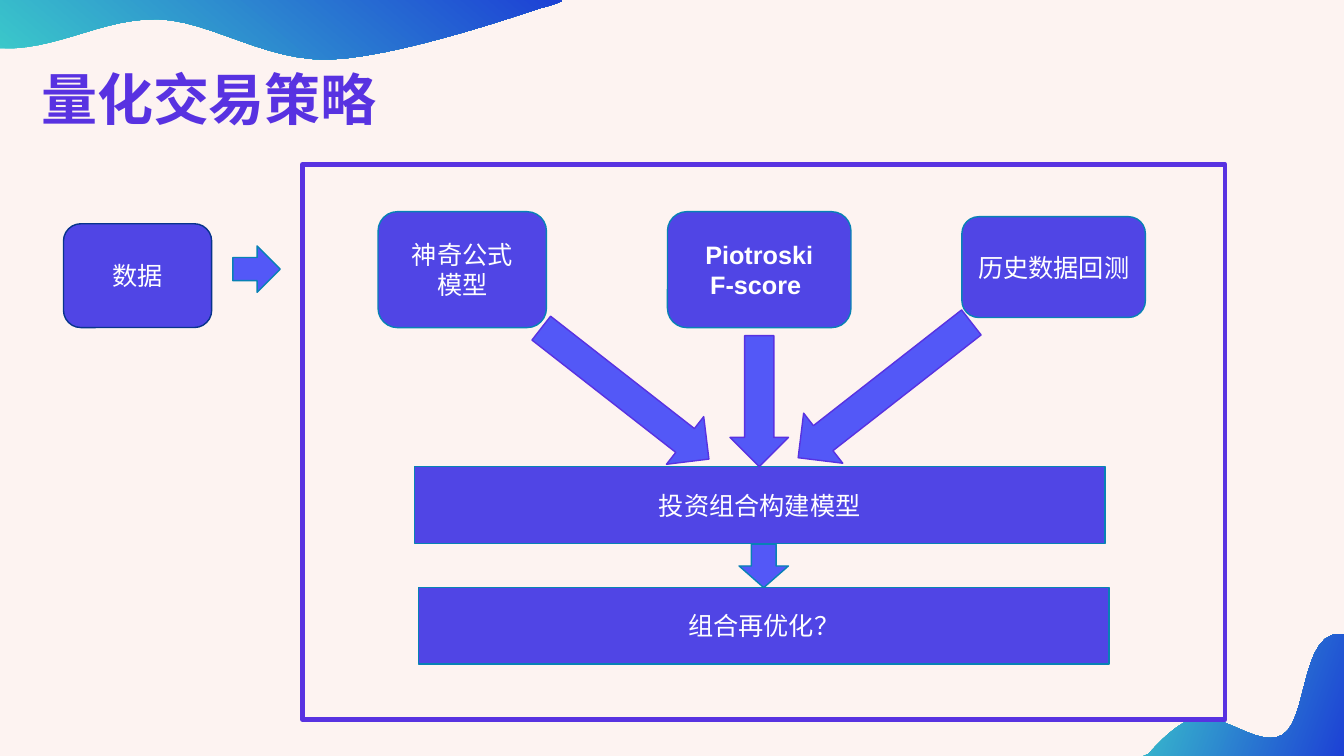
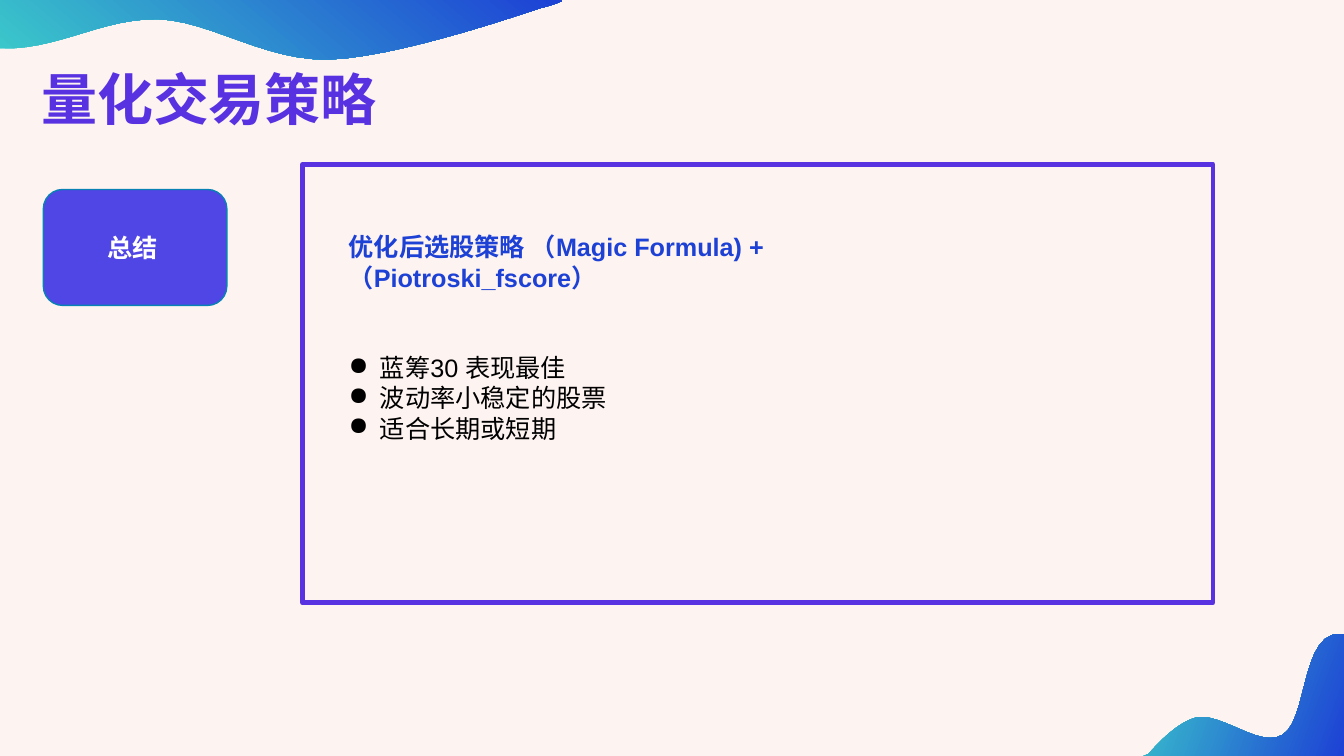
from pptx import Presentation
from pptx import util as u
from pptx.dml.color import RGBColor
from pptx.enum import shapes, text
from pptx.oxml.ns import qn

SCALE = 9144  # EMU in one px, 100 px to the inch
KIND = shapes.MSO_SHAPE
MID = text.PP_ALIGN.CENTER

CREAM, WHITE, BLACK = "FDF3F1", "FFFFFF", "000000"
PURPLE, INDIGO, VIOLET = "5832E1", "5045E5", "5358F7"
TEAL, NAVY = "0881B5", "07348C"
AQUA, BLUE = "3BCACA", "1D41D5"

# A pair is a corner; six numbers are two control points and an end.
TOP = [(0, 0), (556, 0), (557, 1),
       (555, 2, 549, 5, 536, 8), (503, 19, 390, 57, 327, 59),
       (263, 61, 210, 21, 157, 19), (105, 18, 65, 45, 13, 48), (0, 48)]
FOOT = [(199, 0), (199, 121), (0, 121), (5, 119),
        (18, 104, 36, 87, 52, 83), (77, 77, 116, 114, 138, 100),
        (161, 87, 157, 11, 187, 1), (189, 1, 191, 0, 193, 0)]


def px(n):
    return round(n * SCALE)


def color(code):
    return RGBColor.from_string(code)


def write(shape, lines, size=18, font="Arial", ink=WHITE, bold=False,
          align=None, bullet=None, indent=0, before=0, fresh=True):
    """Fill the shape with paragraphs, or add to it when not fresh."""
    frame = shape.text_frame
    frame.word_wrap = True
    for i, line in enumerate(lines):
        para = frame.paragraphs[0] if fresh and i == 0 else frame.add_paragraph()
        if bullet:
            props = para._p.get_or_add_pPr()
            props.set("marL", str(px(indent)))
            props.set("indent", str(-px(indent)))
            mark = props.makeelement(qn("a:buChar"), {"char": bullet})
            props.append(mark)
        if align is not None:
            para.alignment = align
        if before and i == 0:
            para.space_before = u.Pt(before)
        run = para.add_run()
        run.text = line
        run.font.size, run.font.name = u.Pt(size), font
        run.font.bold = bold
        run.font.color.rgb = color(ink)


def label(page, x, y, w, h, lines, **style):
    box = page.shapes.add_textbox(px(x), px(y), px(w), px(h))
    write(box, lines, **style)
    return box


def draw(page, kind, x, y, w, h, fill=None, line=TEAL, width=1, turn=0):
    shape = page.shapes.add_shape(kind, px(x), px(y), px(w), px(h))
    shape.shadow.inherit = False
    if fill:
        shape.fill.solid()
        shape.fill.fore_color.rgb = color(fill)
    else:
        shape.fill.background()
    shape.line.color.rgb = color(line)
    shape.line.width = u.Pt(width)
    shape.rotation = turn
    return shape


def node(page, x, y, w, h, lines, kind=KIND.ROUNDED_RECTANGLE, line=TEAL, bold=False):
    shape = draw(page, kind, x, y, w, h, INDIGO, line)
    shape.text_frame.vertical_anchor = text.MSO_ANCHOR.MIDDLE
    write(shape, lines, bold=bold, align=MID)


def arrow(page, x, y, w, h, line=PURPLE, turn=0, kind=KIND.DOWN_ARROW):
    draw(page, kind, x, y, w, h, VIOLET, line, turn=turn)


def border(page, x, y, w, h):
    draw(page, KIND.RECTANGLE, x, y, w, h, line=PURPLE, width=3.25)


def trace(path, steps=12):
    """Turn corners and Bezier curves into a list of points."""
    dots = []
    for part in path:
        if len(part) == 2:
            dots.append(part)
            continue
        ends = [dots[-1], part[:2], part[2:4], part[4:]]
        for k in range(1, steps + 1):
            t = k / steps
            mix = ((1 - t) ** 3, 3 * t * (1 - t) ** 2, 3 * t * t * (1 - t), t ** 3)
            dots.append(tuple(sum(m * e[a] for m, e in zip(mix, ends))
                              for a in (0, 1)))
    return dots


def wave(page, x, y, path, angle):
    dots = [(px(x + a), px(y + b)) for a, b in trace(path)]
    pen = page.shapes.build_freeform(*dots[0])
    pen.add_line_segments(dots[1:], close=True)
    shape = pen.convert_to_shape()
    shape.shadow.inherit = False
    shape.line.fill.background()
    shape.fill.gradient()
    shape.fill.gradient_angle = angle
    for stop, code in zip(shape.fill.gradient_stops, (AQUA, BLUE)):
        stop.color.rgb = color(code)


def start(deck, title):
    """Add a page with its background, waves and title."""
    page = deck.slides.add_slide(deck.slide_layouts[6])
    page.background.fill.solid()
    page.background.fill.fore_color.rgb = color(CREAM)
    wave(page, 0, 0, TOP, 50)
    wave(page, 1134, 629, FOOT, 340)
    label(page, 31, 59, 630, 77, [title], size=40,
          font="Times New Roman", ink=PURPLE, bold=True)
    return page


def source(page, x, y):
    node(page, x, y, 147, 103, ["数据"], line=NAVY)
    arrow(page, x + 168, y + 22, 47, 46, line=TEAL, kind=KIND.RIGHT_ARROW)


def flow(page, x, y, w, h):
    """Three models lead into a portfolio, which is then refined."""
    node(page, x + 362, y + 47, 182, 115, ["Piotroski", "F-score "], bold=True)
    node(page, x + 654, y + 52, 182, 100, ["历史数据回测"])
    node(page, x + 75, y + 47, 167, 115, ["神奇公式", "模型"])
    steps = [(111, 300, "投资组合构建模型"), (115, 420, "组合再优化？")]
    for dx, dy, name in steps:
        node(page, x + dx, y + dy, 685, 76, [name], kind=KIND.RECTANGLE)
    arrow(page, x + 424, y + 170, 58, 130)
    arrow(page, x + 546, y + 115, 63, 218, turn=52)
    arrow(page, x + 290, y + 122, 60, 211, turn=308)
    arrow(page, x + 433, y + 377, 49, 43, line=TEAL)
    border(page, x, y, w, h)


def recap(page, x, y, w, h):
    border(page, x, y, w, h)
    box = label(page, x + 36, y + 62, 640, 252,
                ["优化后选股策略 （Magic Formula) + （Piotroski_fscore）"],
                ink=BLUE, bold=True)
    write(box, ["蓝筹30 表现最佳", "波动率小稳定的股票", "适合长期或短期"],
          ink=BLACK, bullet="●", indent=31, before=43, fresh=False)


def main():
    deck = Presentation()
    deck.slide_width, deck.slide_height = px(1333), px(750)
    title = "量化交易策略"

    page = start(deck, title)
    source(page, 63, 222)
    flow(page, 300, 163, 915, 551)

    page = start(deck, title)
    node(page, 43, 188, 182, 115, ["总结 "], bold=True)
    recap(page, 300, 163, 903, 435)

    deck.save("out.pptx")


if __name__ == "__main__":
    main()
